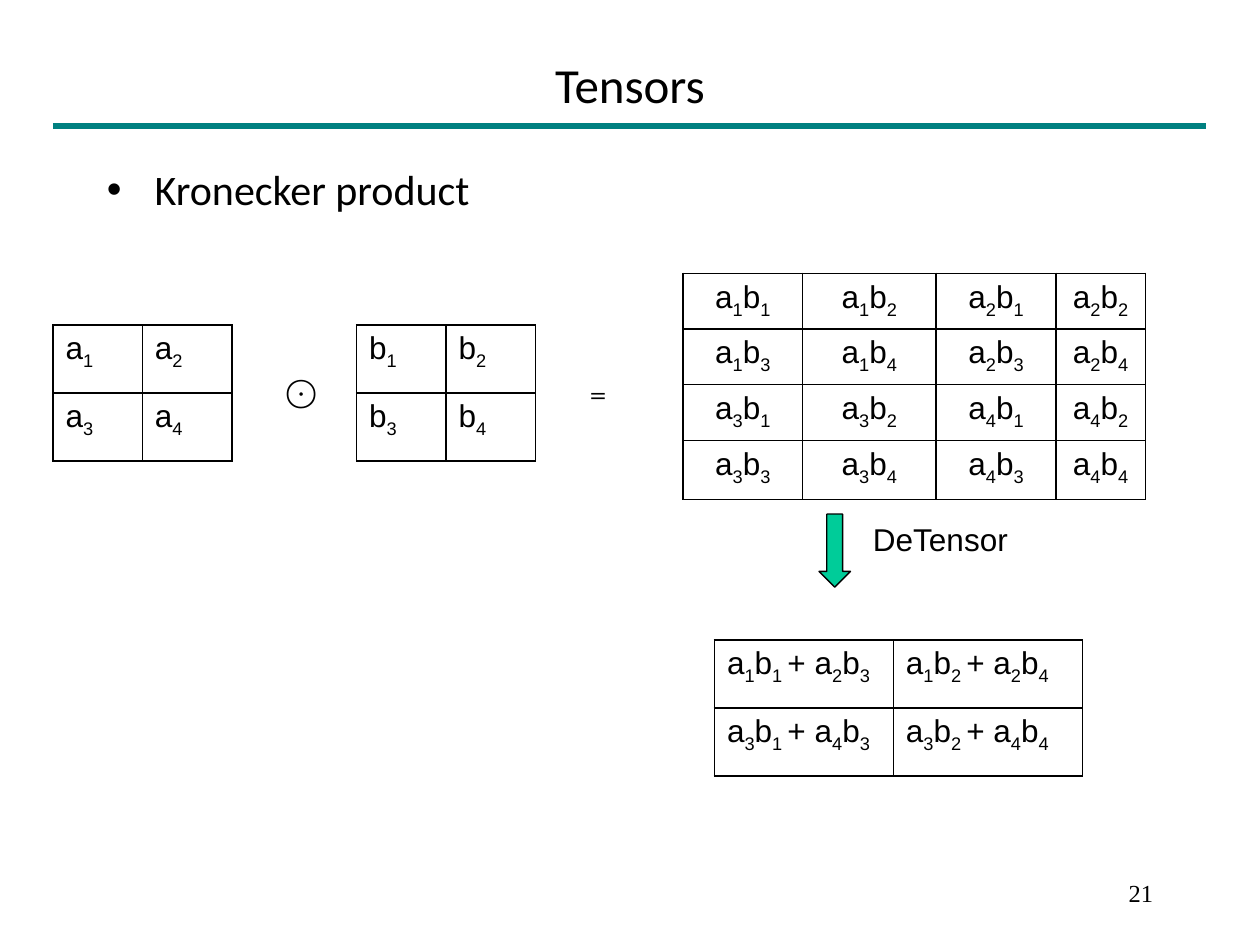
from lxml.etree import SubElement
from pptx import Presentation
from pptx.dml.color import RGBColor
from pptx.enum.shapes import MSO_CONNECTOR, MSO_SHAPE
from pptx.enum.text import MSO_ANCHOR, MSO_AUTO_SIZE, PP_ALIGN
from pptx.oxml.ns import qn
from pptx.util import Inches, Pt

BLACK = "000000"


def colour(value):
    """Turn a hex string into a colour."""
    return RGBColor.from_string(value)


def box(*lengths):
    """Turn left, top, width and height in inches into lengths."""
    return [Inches(length) for length in lengths]


def add_run(paragraph, text, size, font, subscript=False):
    """Append one formatted run to a paragraph."""
    run = paragraph.add_run()
    run.text = text
    run.font.size = Pt(size)
    run.font.name = font
    run.font.bold = False
    run.font.color.rgb = colour(BLACK)
    if subscript:
        run.font._element.set("baseline", "-25000")


def add_title(slide, text):
    """Place and fill the title placeholder."""
    title = slide.shapes.title
    title.left, title.top, title.width, title.height = box(0.75, 0.33, 8.5, 0.67)
    title.text_frame.vertical_anchor = MSO_ANCHOR.MIDDLE
    paragraph = title.text_frame.paragraphs[0]
    paragraph.alignment = PP_ALIGN.CENTER
    add_run(paragraph, text, 28, "Calibri")


def add_label(shapes, area, text, size, font, wrap=False, align=PP_ALIGN.LEFT):
    """Add a one-line text box and return its paragraph."""
    frame = shapes.add_textbox(*box(*area)).text_frame
    frame.word_wrap = wrap
    frame.auto_size = MSO_AUTO_SIZE.NONE if wrap else MSO_AUTO_SIZE.SHAPE_TO_FIT_TEXT
    paragraph = frame.paragraphs[0]
    paragraph.alignment = align
    add_run(paragraph, text, size, font)
    return paragraph


def add_bullet(paragraph):
    """Give a paragraph a hanging bullet."""
    paragraph.space_before = Pt(4.8)
    properties = paragraph._p.get_or_add_pPr()
    properties.set("marL", str(Inches(0.38)))
    properties.set("indent", str(-Inches(0.38)))
    SubElement(properties, qn("a:buFont"), typeface="Arial")
    SubElement(properties, qn("a:buChar"), char="•")


def add_rule(slide):
    """Draw the rule under the title."""
    rule = slide.shapes.add_connector(MSO_CONNECTOR.STRAIGHT, *box(0.42, 1, 9.57, 1))
    rule.line.color.rgb = colour("008080")
    rule.line.width = Pt(4)
    SubElement(rule._element.spPr, qn("a:effectLst"))


def add_borders(cell):
    """Outline a cell in black."""
    properties = cell._tc.get_or_add_tcPr()
    for side in ("lnL", "lnR", "lnT", "lnB"):
        border = SubElement(properties, qn(f"a:{side}"), w=str(Pt(1)))
        SubElement(SubElement(border, qn("a:solidFill")), qn("a:srgbClr"), val=BLACK)


def add_matrix(slide, left, top, widths, heights, entries, align=PP_ALIGN.LEFT):
    """Add a table whose entries alternate base and subscript parts."""
    area = box(left, top, sum(widths), sum(heights))
    matrix = slide.shapes.add_table(len(heights), len(widths), *area).table
    matrix.first_row = matrix.horz_banding = False
    for column, width in zip(matrix.columns, widths):
        column.width = Inches(width)
    for row, height, row_entries in zip(matrix.rows, heights, entries):
        row.height = Inches(height)
        for cell, entry in zip(row.cells, row_entries):
            add_borders(cell)
            cell.fill.background()
            paragraph = cell.text_frame.paragraphs[0]
            paragraph.alignment = align
            for position, part in enumerate(entry.split("|")):
                add_run(paragraph, part, 18, "Arial", subscript=position % 2 == 1)


def add_detensor_step(slide):
    """Add the grouped down arrow and its label."""
    step = slide.shapes.add_group_shape().shapes
    arrow = step.add_shape(MSO_SHAPE.DOWN_ARROW, *box(6.5, 4.08, 0.25, 0.58))
    arrow.shadow.inherit = False
    arrow.fill.solid()
    arrow.fill.fore_color.rgb = colour("00CC99")
    arrow.line.color.rgb = colour(BLACK)
    arrow.line.width = Pt(0.75)
    add_label(step, (6.83, 4.08, 1.28, 0.4), "DeTensor", 18, "Arial")


def factor(letter):
    """List the entries of a two by two matrix."""
    return [[f"{letter}|{2 * row + col + 1}" for col in range(2)] for row in range(2)]


def kronecker_entry(row, col):
    """Name one entry of the Kronecker product."""
    return f"a|{row // 2 * 2 + col // 2 + 1}|b|{row % 2 * 2 + col % 2 + 1}"


def detensor_entry(row, col):
    """Name one entry of the matrix product."""
    return f"a|{2 * row + 1}|b|{col + 1} |+ a|{2 * row + 2}|b|{col + 3}"


def main():
    """Build the slide and save it."""
    deck = Presentation()
    deck.slide_width, deck.slide_height = Inches(10), Inches(7.5)
    slide = deck.slides.add_slide(deck.slide_layouts[5])
    add_rule(slide)
    add_title(slide, "Tensors")
    topic = add_label(slide.shapes, (0.75, 1.25, 8.5, 0.67), "Kronecker product",
                      24, "Calibri", wrap=True)
    add_bullet(topic)
    add_label(slide.shapes, (7.17, 6.92, 2.08, 0.42), "21", 14, "Times New Roman",
              wrap=True, align=PP_ALIGN.RIGHT)

    pair_heights = [0.54] * 2
    for letter, left in (("a", 0.42), ("b", 2.83)):
        add_matrix(slide, left, 2.58, [0.71] * 2, pair_heights, factor(letter))
    for operator, left, width in (("⨀", 2.17, 0.42), ("=", 4.58, 0.39)):
        add_label(slide.shapes, (left, 2.92, width, 0.4), operator, 18, "Cambria")

    kronecker = [[kronecker_entry(row, col) for col in range(4)] for row in range(4)]
    add_matrix(slide, 5.42, 2.17, [0.95, 1.06, 0.95, 0.71], [0.42] * 3 + [0.47],
               kronecker, PP_ALIGN.CENTER)
    add_detensor_step(slide)
    detensor = [[detensor_entry(row, col) for col in range(2)] for row in range(2)]
    add_matrix(slide, 5.67, 5.08, [1.42, 1.5], pair_heights, detensor)
    deck.save("out.pptx")


if __name__ == "__main__":
    main()
